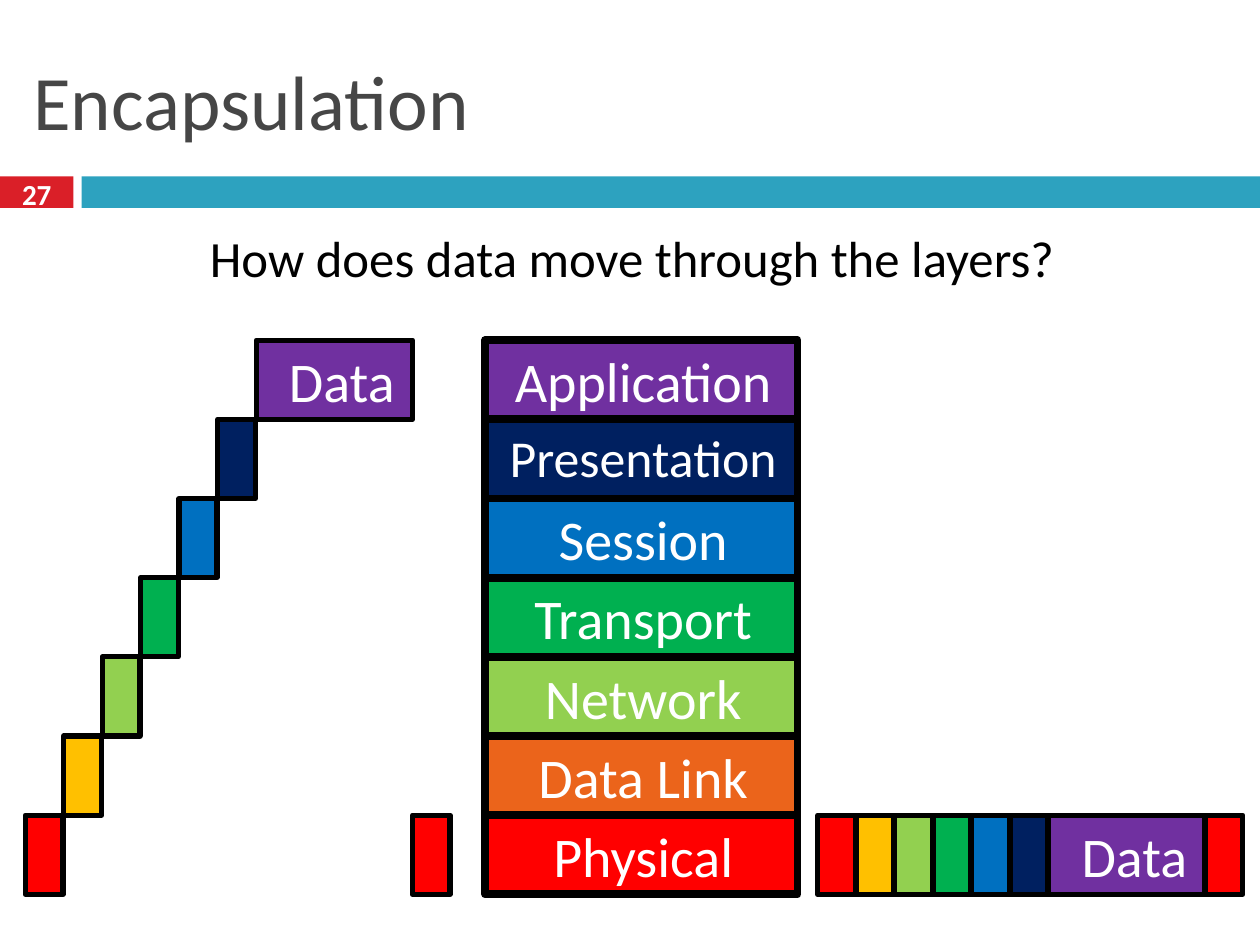
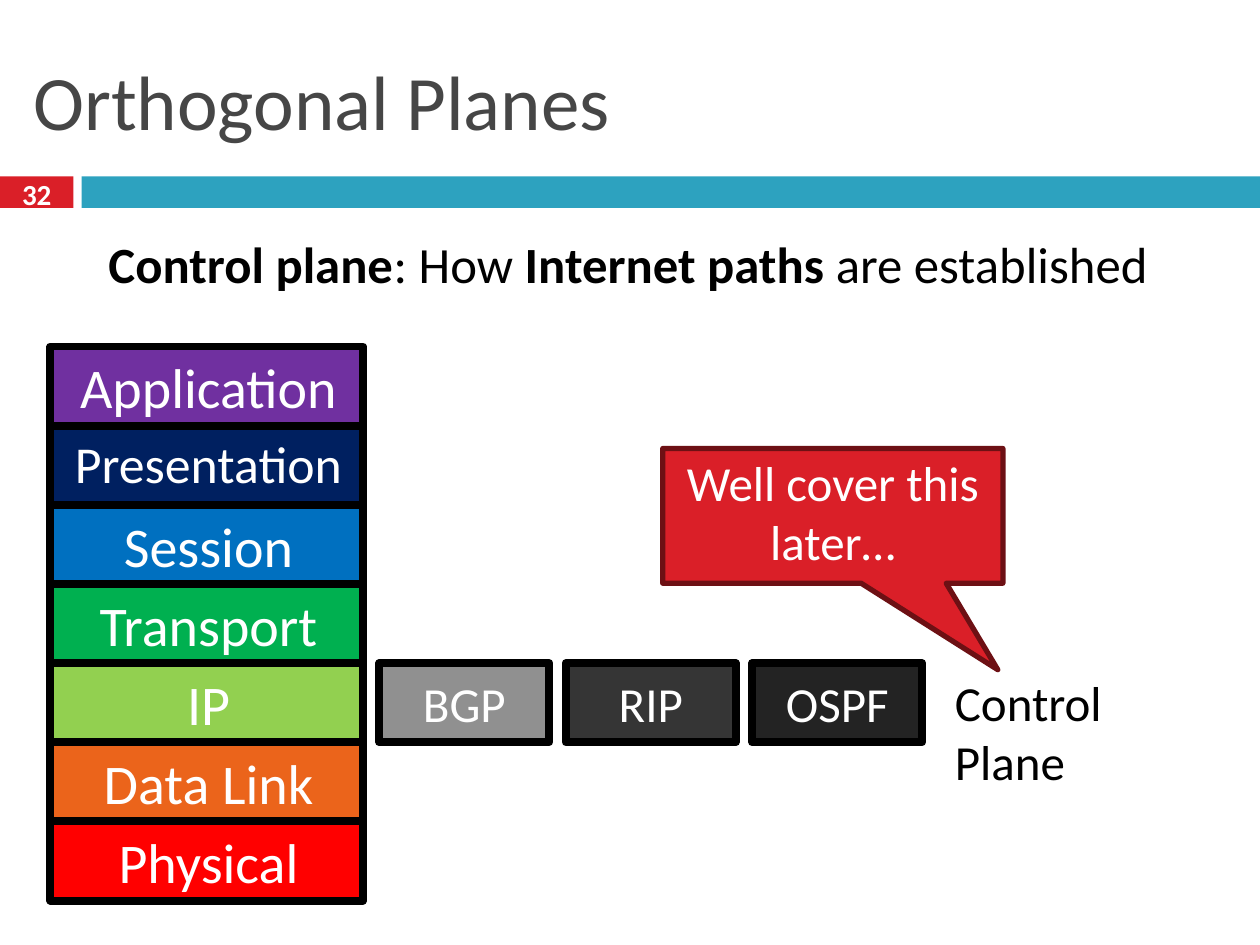
"""Build two slides on network layers: encapsulation and orthogonal planes."""
from pptx import Presentation
from pptx import util as u
from pptx.dml.color import RGBColor
from pptx.enum import shapes, text

FONT = "Calibri"
BLACK = RGBColor(0x00, 0x00, 0x00)
WHITE = RGBColor(0xFF, 0xFF, 0xFF)
TITLE_GREY = RGBColor(0x46, 0x46, 0x46)
BADGE_RED = RGBColor(0xDA, 0x1F, 0x28)
BAND_TEAL = RGBColor(0x2D, 0xA2, 0xBF)
CALLOUT_EDGE = RGBColor(0x6D, 0x10, 0x14)
PURPLE = RGBColor(0x70, 0x30, 0xA0)
NAVY = RGBColor(0x00, 0x20, 0x60)
BLUE = RGBColor(0x00, 0x70, 0xC0)
GREEN = RGBColor(0x00, 0xB0, 0x50)
LIME = RGBColor(0x92, 0xD0, 0x50)
ORANGE = RGBColor(0xEB, 0x64, 0x1B)
AMBER = RGBColor(0xFF, 0xC0, 0x00)
RED = RGBColor(0xFF, 0x00, 0x00)

LAYER_COLORS = [PURPLE, NAVY, BLUE, GREEN, LIME, ORANGE, RED]
HEADER_COLORS = [NAVY, BLUE, GREEN, LIME, AMBER, RED]
PROTOCOLS = [("BGP", RGBColor(0x90, 0x90, 0x90)),
             ("RIP", RGBColor(0x35, 0x35, 0x35)),
             ("OSPF", RGBColor(0x23, 0x23, 0x23))]

ROW = 45.24
LAYER_WIDTH = 178.56
HEADER_WIDTH, HEADER_STEP = 21.6, 22
DATA_WIDTH = 89.28
STACK_TOP = 194.4
PLANE_TOP = 198


def write(shape, spans, size, color, align=text.PP_ALIGN.CENTER,
          anchor=text.MSO_ANCHOR.TOP, margins=(7.2, 7.2)):
    """Put one paragraph of (wording, bold) spans into a shape."""
    frame = shape.text_frame
    frame.word_wrap = True
    frame.vertical_anchor = anchor
    frame.margin_left, frame.margin_right = map(u.Pt, margins)
    para = frame.paragraphs[0]
    para.alignment = align
    for wording, bold in spans:
        span = para.add_run()
        span.text = wording
        span.font.name = FONT
        span.font.size = u.Pt(size)
        span.font.bold = bold
        span.font.color.rgb = color


def add_text(page, place, spans, size, color=BLACK, **style):
    """Add a text box at a (left, top, width, height) place."""
    box = page.shapes.add_textbox(*map(u.Pt, place))
    write(box, spans, size, color, **style)


def add_box(page, place, fill, edge=None, weight=0,
            kind=shapes.MSO_SHAPE.RECTANGLE):
    """Add a filled shape, outlined when an edge colour is given."""
    box = page.shapes.add_shape(kind, *map(u.Pt, place))
    box.shadow.inherit = False
    box.fill.solid()
    box.fill.fore_color.rgb = fill
    if edge is None:
        box.line.fill.background()
    else:
        box.line.color.rgb = edge
        box.line.width = u.Pt(weight)
    return box


def add_page(deck, title, number):
    """Add a blank page with the title, the band and the page number."""
    page = deck.slides.add_slide(deck.slide_layouts[6])
    middle = text.MSO_ANCHOR.MIDDLE
    add_box(page, (0, 100.8, 42, 18), BADGE_RED)
    add_box(page, (46.6, 100.8, 673.4, 18), BAND_TEAL)
    add_text(page, (12, 18, 696, 78), [(title, False)], 44, TITLE_GREY,
             align=text.PP_ALIGN.LEFT, anchor=middle)
    add_text(page, (0, 98.6, 42, 24), [(number, True)], 16.6, WHITE, anchor=middle)
    return page


def add_layer_stack(page, left, top, names):
    """Stack the seven named layers from the top down."""
    for row, (name, color) in enumerate(zip(names, LAYER_COLORS)):
        layer = add_box(page, (left, top + row * ROW, LAYER_WIDTH, ROW),
                        color, BLACK, 4.5)
        size = 29.6 if name == "Presentation" else 32
        write(layer, [(name, False)], size, WHITE, margins=(2.2, 0))


def add_packet(page, left, top, drop):
    """Draw data with its headers, each one lower than the last by drop."""
    data_left = left + len(HEADER_COLORS) * HEADER_STEP
    data = add_box(page, (data_left, top, DATA_WIDTH, ROW), PURPLE, BLACK, 3)
    write(data, [("Data", False)], 32, WHITE, margins=(8.64, 0))
    for step, color in enumerate(HEADER_COLORS, start=1):
        place = (data_left - step * HEADER_STEP, top + step * drop, HEADER_WIDTH, ROW)
        add_box(page, place, color, BLACK, 3)
    trailer_top = top + len(HEADER_COLORS) * drop
    add_box(page, (data_left + DATA_WIDTH, trailer_top, HEADER_WIDTH, ROW),
            RED, BLACK, 3)


def add_protocols(page, left, top):
    """Place the routing protocols in a row beside the IP layer."""
    for column, (name, color) in enumerate(PROTOCOLS):
        box = add_box(page, (left + column * 106.56, top, 97.2, ROW),
                      color, BLACK, 4.5)
        write(box, [(name, False)], 28, WHITE, anchor=text.MSO_ANCHOR.MIDDLE)


def add_callout(page, place, wording):
    """Add a speech callout whose tail points down to the right."""
    callout = add_box(page, place, BADGE_RED, CALLOUT_EDGE, 3,
                      shapes.MSO_SHAPE.RECTANGULAR_CALLOUT)
    callout.adjustments[0] = 0.485
    callout.adjustments[1] = 1.142
    write(callout, [(wording, False)], 28, WHITE)
    callout.text_frame.margin_top = u.Pt(2.2)


def build_encapsulation(deck):
    """Show data gaining headers on its way down the layers."""
    page = add_page(deck, "Encapsulation", "27")
    add_text(page, (14.4, 126, 694, 46.8),
             [("How does data move through the layers?", False)], 29)
    add_layer_stack(page, 277.2, STACK_TOP,
                    ["Application", "Presentation", "Session", "Transport",
                     "Network", "Data Link", "Physical"])
    add_packet(page, 14.4, STACK_TOP, ROW)
    add_packet(page, 467.3, STACK_TOP + 6 * ROW, 0)


def build_planes(deck):
    """Show the control plane beside the layers."""
    page = add_page(deck, "Orthogonal Planes", "32")
    add_layer_stack(page, 28.8, PLANE_TOP,
                    ["Application", "Presentation", "Session", "Transport",
                     "IP", "Data Link", "Physical"])
    add_protocols(page, 216.7, PLANE_TOP + 4 * ROW)
    add_text(page, (538.6, 380.9, 164, 41), [("Control Plane", False)], 28,
             align=text.PP_ALIGN.LEFT)
    add_callout(page, (378.7, 256.3, 194.4, 77), "Well cover this later…")
    add_text(page, (49, 129.6, 620, 42.5),
             [("Control plane", True), (": How ", False),
              ("Internet paths", True), (" are established", False)], 29)


def main():
    """Build both slides and save the deck."""
    deck = Presentation()
    deck.slide_width, deck.slide_height = u.Pt(720), u.Pt(540)
    build_encapsulation(deck)
    build_planes(deck)
    deck.save("out.pptx")


if __name__ == "__main__":
    main()
